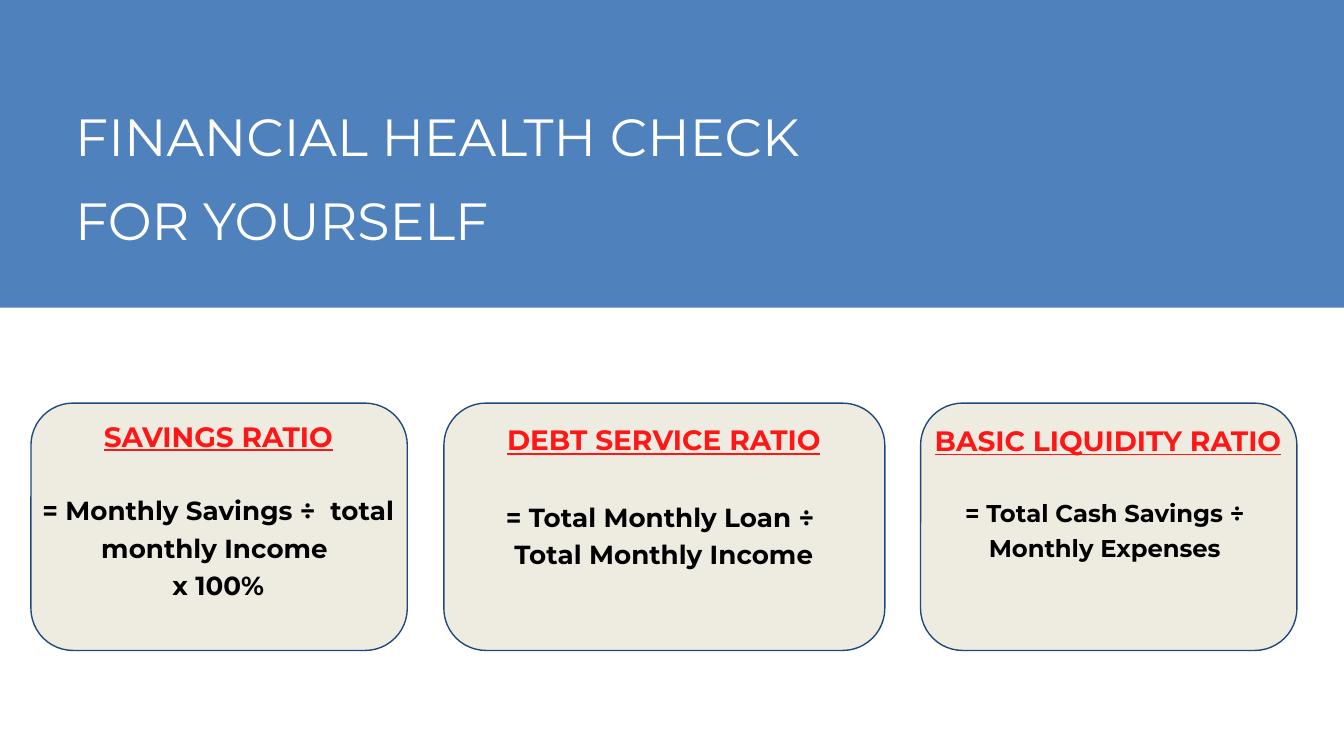
from pptx import Presentation
from pptx import util as u
from pptx.dml.color import RGBColor
from pptx.enum import shapes, text

Pt = u.Pt
COLORS = {"banner": "4F81BD", "card": "EEECE1", "outline": "1F497D",
          "title": "FFFFFF", "heading": "FF1616", "formula": "000000"}

deck = Presentation()
deck.slide_width, deck.slide_height = Pt(720), Pt(405)
page = deck.slides.add_slide(deck.slide_layouts[6])


def add_panel(kind, left, top, width, height, color):
    """Add a filled preset shape without outline or shadow."""
    panel = page.shapes.add_shape(kind, Pt(left), Pt(top), Pt(width), Pt(height))
    panel.shadow.inherit = False
    panel.fill.solid()
    panel.fill.fore_color.rgb = RGBColor.from_string(COLORS[color])
    panel.line.fill.background()
    return panel


def add_text(left, top, width, height, lines, line_spacing, align):
    """Add a text box; each line is (wording, size, color, bold, underline)."""
    box = page.shapes.add_textbox(Pt(left), Pt(top), Pt(width), Pt(height))
    frame = box.text_frame
    frame.word_wrap = True
    frame.margin_left = frame.margin_right = frame.margin_top = frame.margin_bottom = 0
    frame.text = "\n".join(line[0] for line in lines)
    for para, (_, size, color, bold, underline) in zip(frame.paragraphs, lines):
        para.line_spacing = line_spacing
        para.alignment = align
        for span in para.runs:
            span.font.name = "Montserrat"
            span.font.size = Pt(size)
            span.font.bold = bold
            span.font.underline = underline
            span.font.color.rgb = RGBColor.from_string(COLORS[color])
    return frame


# Title banner
add_panel(shapes.MSO_SHAPE.RECTANGLE, 0, 0, 720, 164.9, "banner")
add_text(40.3, 44.6, 401.8, 120.2,
         [("FINANCIAL HEALTH CHECK FOR YOURSELF", 28, "title", False, False)],
         1.34, text.PP_ALIGN.LEFT)

# Ratio cards: card left and width, text left, top and width, heading,
# gap below the heading, formula size, formula lines
ratios = [
    (16.6, 201.6, 10.1, 221, 213.8, "SAVINGS RATIO", 19, 14,
     ["= Monthly Savings ÷  total monthly Income ", "x 100%"]),
    (237.8, 236.2, 231.1, 223, 249.1, "DEBT SERVICE RATIO", 20.5, 14,
     ["= Total Monthly Loan ÷ ", "Total Monthly Income"]),
    (493.2, 201.6, 486.7, 223.2, 213.8, "BASIC LIQUIDITY RATIO", 19, 13,
     ["= Total Cash Savings ÷ ", "Monthly Expenses "]),
]
for left, width, text_left, text_top, text_width, heading, gap, size, formula in ratios:
    card = add_panel(shapes.MSO_SHAPE.ROUNDED_RECTANGLE, left, 216, width, 132.5, "card")
    card.adjustments[0] = 0.17
    card.line.color.rgb = RGBColor.from_string(COLORS["outline"])
    card.line.width = Pt(0.75)

    lines = [(heading, 15, "heading", True, True)]
    lines += [(line, size, "formula", True, False) for line in formula]
    frame = add_text(text_left, text_top, text_width, 100, lines, 1.2, text.PP_ALIGN.CENTER)
    frame.paragraphs[0].space_after = Pt(gap)

deck.save("out.pptx")
